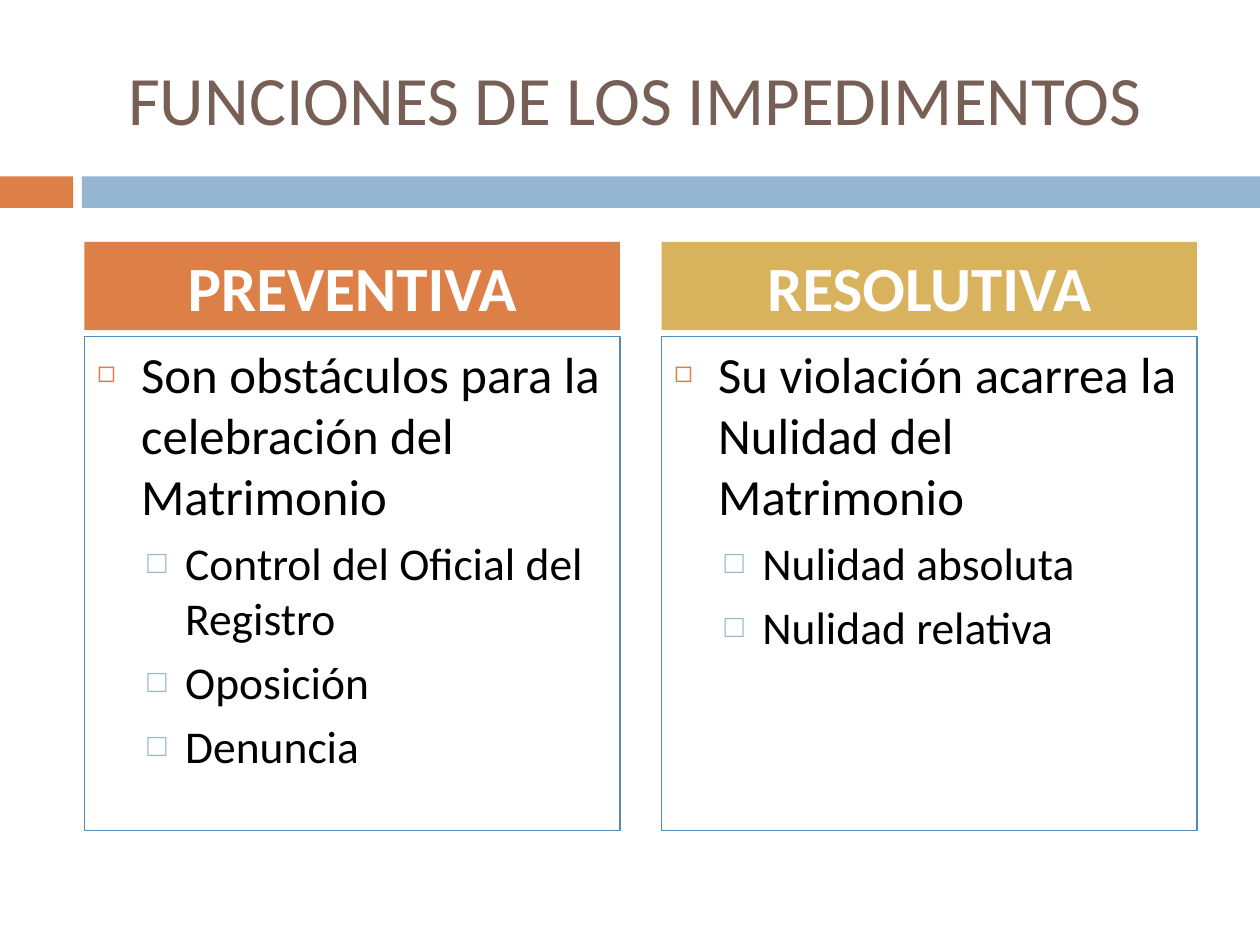
import pptx
import pptx.dml.color
import pptx.enum.shapes
import pptx.enum.text
import pptx.oxml
import pptx.oxml.ns
import pptx.util
from pptx.util import Inches

RGBColor = pptx.dml.color.RGBColor
ORANGE = RGBColor(0xDD, 0x80, 0x47)
BLUE = RGBColor(0x94, 0xB6, 0xD2)
GOLD = RGBColor(0xD8, 0xB2, 0x5C)
BROWN = RGBColor(0x77, 0x5F, 0x55)
BORDER = RGBColor(0x55, 0x8B, 0xB8)
BLACK = RGBColor(0, 0, 0)
WHITE = RGBColor(0xFF, 0xFF, 0xFF)

TITLE_FONT = {"name": "Calibri", "size": pptx.util.Pt(39.6), "bold": False}
HEADING_FONT = {"name": "Calibri", "size": pptx.util.Pt(36), "bold": True}
LEVELS = [
    {"size": 29, "before": 7, "left": 0.35, "hanging": 0.35,
     "bullet": "◻", "color": ORANGE, "percent": 60},
    {"size": 26, "before": 5.5, "left": 0.7, "hanging": 0.3,
     "bullet": "□", "color": BLUE, "percent": 70},
]
COLUMNS = [
    ("PREVENTIVA", ORANGE, [
        (0, "Son obstáculos para la celebración del Matrimonio"),
        (1, "Control del Oficial del Registro"),
        (1, "Oposición"),
        (1, "Denuncia"),
    ]),
    ("RESOLUTIVA", GOLD, [
        (0, "Su violación acarrea la Nulidad del Matrimonio"),
        (1, "Nulidad absoluta"),
        (1, "Nulidad relativa"),
    ]),
]


def set_attributes(target, values):
    """Set every named value on the target."""
    for name, value in values.items():
        setattr(target, name, value)


def place(shape, left, top, width, height):
    """Move a shape to a box given in inches."""
    box = {"left": left, "top": top, "width": width, "height": height}
    set_attributes(shape, {name: Inches(value) for name, value in box.items()})


def format_frame(shape, anchor):
    """Give a placeholder wrapped text of fixed size and return its frame."""
    set_attributes(shape.text_frame, {
        "word_wrap": True,
        "auto_size": pptx.enum.text.MSO_AUTO_SIZE.NONE,
        "vertical_anchor": anchor,
    })
    return shape.text_frame


def add_centered_text(shape, text, font, color):
    """Write one centred line in a placeholder."""
    frame = format_frame(shape, pptx.enum.text.MSO_ANCHOR.MIDDLE)
    paragraph = frame.paragraphs[0]
    paragraph.alignment = pptx.enum.text.PP_ALIGN.CENTER
    run = paragraph.add_run()
    run.text = text
    set_attributes(run.font, font)
    run.font.color.rgb = color


def set_bullet(paragraph, level):
    """Apply the hanging indent and coloured bullet of a list level."""
    properties = paragraph._p.get_or_add_pPr()
    properties.set("marL", str(Inches(level["left"])))
    properties.set("indent", str(-Inches(level["hanging"])))
    namespace = pptx.oxml.ns.nsdecls("a")
    for xml in (
        f'<a:buClr {namespace}><a:srgbClr val="{level["color"]}"/></a:buClr>',
        f'<a:buSzPct {namespace} val="{level["percent"] * 1000}"/>',
        f'<a:buChar {namespace} char="{level["bullet"]}"/>',
    ):
        properties.append(pptx.oxml.parse_xml(xml))


def add_band(slide, left, top, width, height):
    """Draw the two-part band, with a short orange piece before the blue one."""
    accent, gap = 0.58, 0.07
    start = accent + gap
    for offset, length, color in ((0, accent, ORANGE), (start, width - start, BLUE)):
        shape = slide.shapes.add_shape(
            pptx.enum.shapes.MSO_SHAPE.RECTANGLE,
            Inches(left + offset), Inches(top), Inches(length), Inches(height))
        shape.shadow.inherit = False
        shape.fill.solid()
        shape.fill.fore_color.rgb = color
        shape.line.fill.background()


def fill_title(shape, left, top, width, height):
    """Place and write the slide title."""
    place(shape, left, top, width, height)
    add_centered_text(shape, "FUNCIONES DE LOS IMPEDIMENTOS", TITLE_FONT, BROWN)


def fill_heading(shape, text, color, left, top, width, height):
    """Place and write a filled column heading."""
    place(shape, left, top, width, height)
    shape.fill.solid()
    shape.fill.fore_color.rgb = color
    add_centered_text(shape, text, HEADING_FONT, WHITE)
    shape.text_frame.paragraphs[0].space_before = pptx.util.Pt(7)


def fill_list(shape, items, left, top, width, height):
    """Place and write a bordered bullet list."""
    place(shape, left, top, width, height)
    shape.line.color.rgb = BORDER
    shape.line.width = pptx.util.Pt(0.75)
    frame = format_frame(shape, pptx.enum.text.MSO_ANCHOR.TOP)
    for index, (depth, text) in enumerate(items):
        paragraph = frame.add_paragraph() if index else frame.paragraphs[0]
        level = LEVELS[depth]
        set_attributes(paragraph, {
            "level": depth, "space_before": pptx.util.Pt(level["before"])})
        set_bullet(paragraph, level)
        run = paragraph.add_run()
        run.text = text
        set_attributes(run.font, {
            "name": "Calibri", "size": pptx.util.Pt(level["size"])})
        run.font.color.rgb = BLACK


def fill_columns(slide, left, top, width, height):
    """Fill the comparison columns within the given box."""
    gap, heading_height, list_offset = 0.33, 0.7, 0.75
    column_width = (width - gap) / len(COLUMNS)
    for index, (heading, color, items) in enumerate(COLUMNS):
        column_left = left + index * (column_width + gap)
        heading_shape = slide.placeholders[1 + 2 * index]
        list_shape = slide.placeholders[2 + 2 * index]
        fill_heading(heading_shape, heading, color,
                     column_left, top, column_width, heading_height)
        fill_list(list_shape, items, column_left, top + list_offset,
                  column_width, height - list_offset)


def main():
    """Build and save the slide."""
    presentation = pptx.Presentation()
    set_attributes(presentation, {
        "slide_width": Inches(10), "slide_height": Inches(7.5)})
    comparison_layout = presentation.slide_layouts[4]
    slide = presentation.slides.add_slide(comparison_layout)
    add_band(slide, 0, 1.4, 10, 0.25)
    fill_title(slide.shapes.title, 0.58, 0.3, 8.92, 0.95)
    fill_columns(slide, 0.67, 1.92, 8.83, 4.67)
    presentation.save("out.pptx")


if __name__ == "__main__":
    main()
